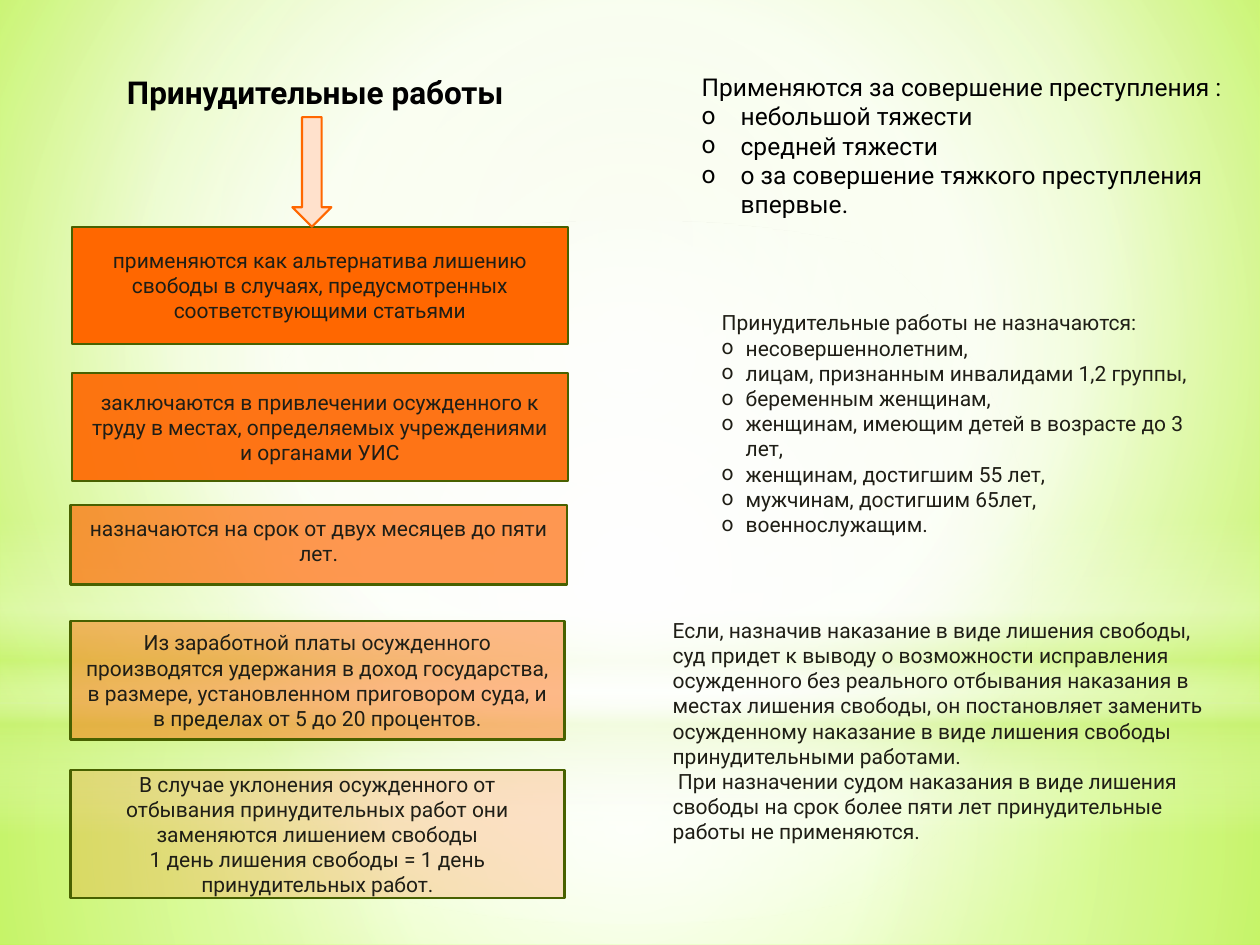
"""Build a slide on forced labour as a criminal penalty."""
from lxml.etree import SubElement
from pptx import Presentation
from pptx.dml.color import RGBColor
from pptx.enum.shapes import MSO_SHAPE as Kind
from pptx.enum.text import MSO_ANCHOR as Anchor, PP_ALIGN as Align
from pptx.oxml.ns import qn
from pptx.util import Inches, Pt

THEME = {
    "font": "Roboto", "title": Pt(18), "lead": Pt(14), "body": Pt(12),
    "black": "000000", "ink": "1F1E16", "orange": "FF6700", "edge": "486100",
    "arrow": "FFE1CC", "white": "FFFFFF", "lime": "CAF278", "line": Pt(1.25),
}
COLUMNS, ROWS = 100, 75
WHITE, LIME = THEME["white"], THEME["lime"]

presentation = Presentation()
presentation.slide_width, presentation.slide_height = Inches(10), Inches(7.5)
COLUMN = presentation.slide_width / COLUMNS
ROW = presentation.slide_height / ROWS
slide = presentation.slides.add_slide(presentation.slide_layouts[6])


def set_gradient(fill, properties, stops, focus):
    """Write a gradient of (position, colour, opacity) stops, circular if focus is given."""
    fill.gradient()
    gradient = properties.find(qn("a:gradFill"))
    for child in list(gradient):
        gradient.remove(child)
    stop_list = SubElement(gradient, qn("a:gsLst"))
    for position, colour, opacity in stops:
        stop = SubElement(stop_list, qn("a:gs"), pos=str(position * 1000))
        paint = SubElement(stop, qn("a:srgbClr"), val=colour)
        if opacity < 100:
            SubElement(paint, qn("a:alpha"), val=str(opacity * 1000))
    if focus:
        circle = SubElement(gradient, qn("a:path"), path="circle")
        sides = {side: str(share * 1000) for side, share in zip("ltrb", focus)}
        SubElement(circle, qn("a:fillToRect"), **sides)
    else:
        SubElement(gradient, qn("a:lin"), ang="5400000", scaled="0")


def write_text(shape, lines, size, colour, bold=False, align=Align.LEFT, hang=0):
    """Fill a shape with paragraphs; with a hang, all but the first are bulleted."""
    frame = shape.text_frame
    frame.word_wrap = True
    for index, line in enumerate(lines):
        paragraph = frame.paragraphs[0] if index == 0 else frame.add_paragraph()
        paragraph.alignment = align
        run = paragraph.add_run()
        run.text = line
        for name, value in {"name": THEME["font"], "size": size, "bold": bold}.items():
            setattr(run.font, name, value)
        run.font.color.rgb = RGBColor.from_string(colour)
        if hang and index:
            properties = paragraph._p.get_or_add_pPr()
            properties.set("marL", str(Inches(hang)))
            properties.set("indent", str(-Inches(hang)))
            SubElement(properties, qn("a:buFont"), typeface=THEME["font"])
            SubElement(properties, qn("a:buChar"), char="o")


slide.background.fill.solid()
set_gradient(slide.background.fill, slide.element.find(".//" + qn("p:bgPr")),
             [(0, "EAFAC9", 100), (60, "F7FFE7", 100), (100, "B7FF29", 100)],
             (20, 10, 20, 60))

CENTRE = (50, 50, 50, 50)
glows = [
    (Kind.RECTANGLE, 55.8, 19.2, CENTRE, [(0, WHITE, 91), (37, WHITE, 76), (100, LIME, 79)]),
    (Kind.RECTANGLE, 0, 55.8, CENTRE, [(0, WHITE, 89), (48, WHITE, 62), (100, LIME, 79)]),
    (Kind.RECTANGLE, 41.2, 25, None, [(0, WHITE, 0), (29, WHITE, 30), (45, LIME, 40),
                                      (55, WHITE, 26), (65, LIME, 60), (100, WHITE, 0)]),
    (Kind.OVAL, 17.5, 55.8, CENTRE, [(0, WHITE, 100), (56, WHITE, 0)]),
]
for kind, top, height, focus, stops in glows:
    glow = slide.shapes.add_shape(kind, 0, int(top * ROW), presentation.slide_width,
                                  int(height * ROW))
    glow.shadow.inherit = False
    glow.line.fill.background()
    set_gradient(glow.fill, glow.element.spPr, stops, focus)

boxes = [
    (5.7, 18, 39.4, 9.3, 100,
     ["применяются как альтернатива лишению свободы в случаях, предусмотренных "
      "соответствующими статьями"]),
    (5.7, 29.6, 39.4, 8.6, 91,
     ["заключаются в привлечении осужденного к труду в местах, определяемых "
      "учреждениями и органами УИС"]),
    (5.6, 40.1, 39.4, 6.3, 68, ["назначаются на срок от двух месяцев до пяти лет."]),
    (5.6, 49.3, 39.2, 9.4, 46,
     ["Из заработной платы осужденного производятся удержания в доход государства, "
      "в размере, установленном приговором суда, и в пределах от 5 до 20 процентов."]),
    (5.6, 61.1, 39.2, 10.2, 20,
     ["В случае уклонения осужденного от отбывания принудительных работ они "
      "заменяются лишением свободы",
      "1 день лишения свободы = 1 день принудительных работ."]),
]
arrow = (23.2, 9.3, 3.1, 8.7, 100, [])
for left, top, width, height, opacity, lines in boxes + [arrow]:
    kind, fill, edge = ((Kind.RECTANGLE, "orange", "edge") if lines
                        else (Kind.DOWN_ARROW, "arrow", "orange"))
    shape = slide.shapes.add_shape(kind, int(left * COLUMN), int(top * ROW),
                                   int(width * COLUMN), int(height * ROW))
    shape.shadow.inherit = False
    shape.fill.solid()
    shape.fill.fore_color.rgb = RGBColor.from_string(THEME[fill])
    if opacity < 100:
        paint = shape.element.spPr.find(qn("a:solidFill")).find(qn("a:srgbClr"))
        SubElement(paint, qn("a:alpha"), val=str(opacity * 1000))
    shape.line.color.rgb = RGBColor.from_string(THEME[edge])
    shape.line.width = THEME["line"]
    shape.text_frame.vertical_anchor = Anchor.MIDDLE
    if len(lines) == 1 and height < 7:
        shape.text_frame.margin_bottom = Inches(0.12)
    write_text(shape, lines, THEME["body"], THEME["ink"], align=Align.CENTER)

texts = [
    (9.1, 5.3, 32.6, 4, ["Принудительные работы"],
     {"size": THEME["title"], "colour": THEME["black"], "bold": True}),
    (54.7, 5.2, 44.1, 12.8,
     ["Применяются за совершение преступления :", "небольшой тяжести",
      "средней тяжести", "о за совершение тяжкого преступления впервые."],
     {"size": THEME["lead"], "colour": THEME["black"], "hang": 0.31}),
    (56.3, 24.1, 39.4, 19.2,
     ["Принудительные работы не назначаются:", "несовершеннолетним,",
      "лицам, признанным инвалидами 1,2 группы,", "беременным женщинам,",
      "женщинам, имеющим детей в возрасте до 3 лет,", "женщинам, достигшим 55 лет,",
      "мужчинам, достигшим 65лет,", "военнослужащим."],
     {"size": THEME["body"], "colour": THEME["ink"], "hang": 0.19}),
    (52.4, 48.5, 44.1, 19.2,
     ["Если, назначив наказание в виде лишения свободы, суд придет к выводу о "
      "возможности исправления осужденного без реального отбывания наказания в "
      "местах лишения свободы, он постановляет заменить осужденному наказание в "
      "виде лишения свободы принудительными работами.",
      " При назначении судом наказания в виде лишения свободы на срок более пяти "
      "лет принудительные работы не применяются."],
     {"size": THEME["body"], "colour": THEME["ink"]}),
]
for left, top, width, height, lines, style in texts:
    text_box = slide.shapes.add_textbox(int(left * COLUMN), int(top * ROW),
                                        int(width * COLUMN), int(height * ROW))
    write_text(text_box, lines, **style)

presentation.save("out.pptx")
